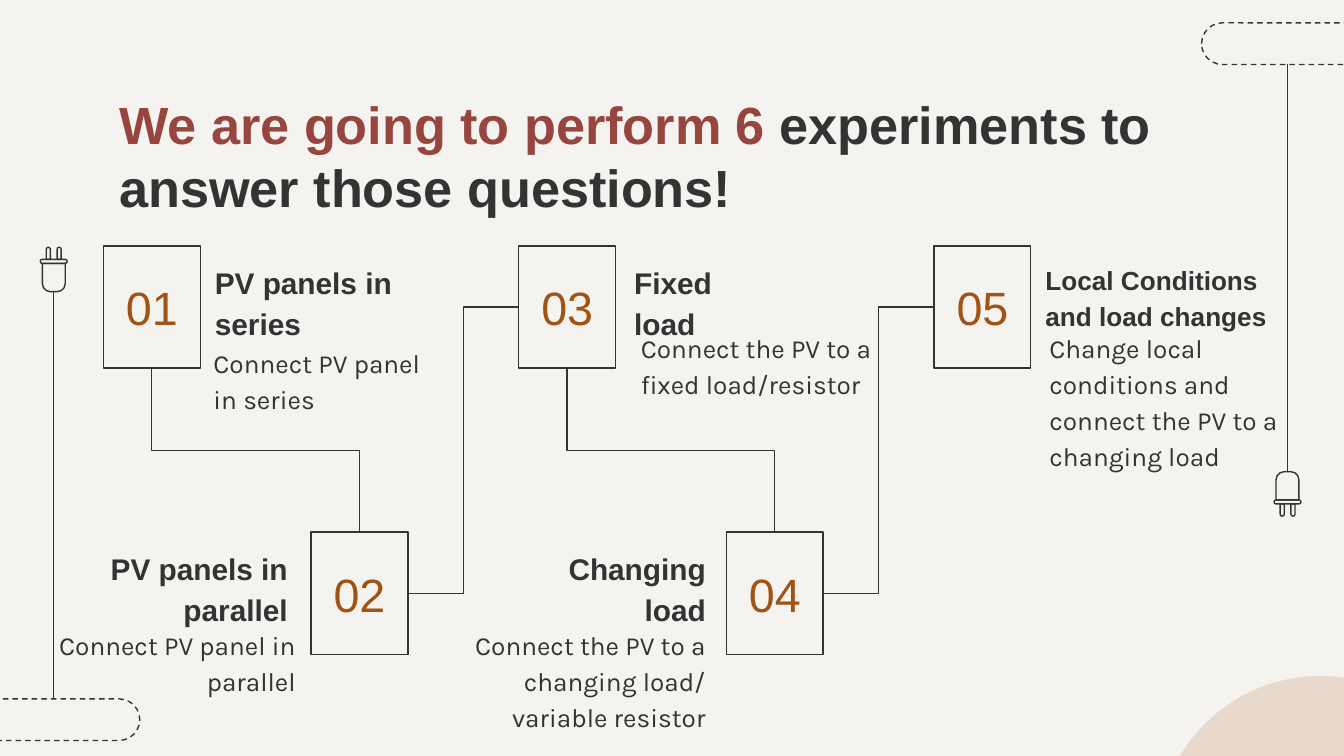
from pptx import Presentation
from pptx import util as u
from pptx.dml.color import RGBColor
from pptx.enum import dml, shapes, text
from pptx.oxml.ns import qn
from lxml import etree

Inches = u.Inches
SHAPE = shapes.MSO_SHAPE
LEFT, CENTER, RIGHT = text.PP_ALIGN.LEFT, text.PP_ALIGN.CENTER, text.PP_ALIGN.RIGHT
INK, PAPER, ORANGE, RED = "333333", "F5F3EF", "A15315", "97453F"

BOX_WIDTH, BOX_HEIGHT = 0.72, 0.91
FIRST_LEFT, LAST_LEFT = 0.77, 6.95
UPPER_TOP, LOWER_TOP = 1.83, 3.96

# heading, heading left and width, heading size, detail, detail left, top and width
STEPS = [
    ("PV panels in series", 1.5, 1.99, 16, "Connect PV panel in series", 1.49, 2.45, 1.83),
    ("PV panels in parallel", 0.41, 1.83, 16, "Connect PV panel in parallel", 0.14, 4.55, 2.16),
    ("Fixed\nload", 4.62, 3.08, 16, "Connect the PV to a fixed load/resistor", 4.67, 2.34, 2.16),
    ("Changing load", 3.76, 1.59, 16,
     "Connect the PV to a changing load/ variable resistor", 3.06, 4.55, 2.29),
    ("Local Conditions\nand load changes", 7.68, 3.08, 14,
     "Change local conditions and connect the PV to a changing load", 7.71, 2.34, 1.99),
]


def color(value):
    return RGBColor.from_string(value)


class Painter:
    def __init__(self, page):
        self.page = page
        self.page.background.fill.solid()
        self.page.background.fill.fore_color.rgb = color(PAPER)

    def outline(self, line):
        line.color.rgb = color(INK)
        line.width = u.Pt(0.75)

    def shape(self, kind, left, top, width, height, fill=None, adjust=None, turn=0):
        """Add an outlined preset shape, hollow unless a fill is given."""
        shape = self.page.shapes.add_shape(
            kind, Inches(left), Inches(top), Inches(width), Inches(height))
        shape.shadow.inherit = False
        shape.rotation = turn
        if adjust is not None:
            shape.adjustments[0] = adjust
        if fill:
            shape.fill.solid()
            shape.fill.fore_color.rgb = color(fill)
        else:
            shape.fill.background()
        self.outline(shape.line)
        return shape

    def pill(self, left, top):
        pill = self.shape(SHAPE.ROUNDED_RECTANGLE, left, top, 1.29, 0.31, adjust=0.5)
        pill.line.dash_style = dml.MSO_LINE.DASH

    def disc(self, left, top, size, fill, opacity):
        disc = self.shape(SHAPE.OVAL, left, top, size, size, fill)
        disc.line.fill.background()
        tint = disc._element.spPr.find(qn("a:solidFill"))[0]
        etree.SubElement(tint, qn("a:alpha")).set("val", str(opacity * 1000))

    def plug(self, middle, cable_end, direction):
        """Draw a plug whose prongs point up (-1) or down (1) from its cable."""
        body_turn, prong_turn = (180, 0) if direction < 0 else (0, 180)

        def part(kind, x, start, width, height, adjust, turn=0):
            near = cable_end + direction * start
            top = min(near, near + direction * height)
            self.shape(kind, x - width / 2, top, width, height, adjust=adjust, turn=turn)

        part(SHAPE.ROUND_2_SAME_RECTANGLE, middle, 0, 0.17, 0.21, 0.35, body_turn)
        part(SHAPE.ROUNDED_RECTANGLE, middle, 0.21, 0.2, 0.03, 0.5)
        for offset in (-0.04, 0.04):
            part(SHAPE.ROUND_2_SAME_RECTANGLE, middle + offset, 0.24, 0.03, 0.09, 0.5, prong_turn)

    def connector(self, start, end, kind=shapes.MSO_CONNECTOR.STRAIGHT):
        link = self.page.shapes.add_connector(kind, *map(Inches, start + end))
        self.outline(link.line)
        etree.SubElement(link._element.spPr, qn("a:effectLst"))
        return link

    def elbow_across(self, start, end):
        self.connector(start, end, shapes.MSO_CONNECTOR.ELBOW)

    def elbow_down(self, start, end):
        """Add an elbow that leaves and arrives vertically, as a quarter-turned one."""
        middle_x, middle_y = (start[0] + end[0]) / 2, (start[1] + end[1]) / 2
        half_x, half_y = (end[0] - start[0]) / 2, (end[1] - start[1]) / 2
        link = self.connector((middle_x + half_y, middle_y - half_x),
                              (middle_x - half_y, middle_y + half_x),
                              shapes.MSO_CONNECTOR.ELBOW)
        link._element.spPr.find(qn("a:xfrm")).set("rot", str(270 * 60000))

    def style_span(self, span, size, font, ink, bold):
        span.font.name = font
        span.font.size = u.Pt(size)
        span.font.bold = bold
        span.font.color.rgb = color(ink)

    def set_text(self, shape, content, size, font="Arial", ink=INK, bold=False,
                 align=LEFT, spacing=None, anchor=text.MSO_ANCHOR.TOP):
        frame = shape.text_frame
        frame.word_wrap = True
        frame.vertical_anchor = anchor
        frame.margin_left = frame.margin_right = Inches(0.1)
        frame.margin_top = frame.margin_bottom = Inches(0.1)
        frame.text = content
        for para in frame.paragraphs:
            para.alignment = align
            para.line_spacing = spacing
            for span in para.runs:
                self.style_span(span, size, font, ink, bold)
        return frame

    def label(self, content, left, top, width, height, size, **style):
        box = self.page.shapes.add_textbox(
            Inches(left), Inches(top), Inches(width), Inches(height))
        return self.set_text(box, content, size, **style)

    def title(self, highlight, rest):
        frame = self.label(highlight, 0.79, 0.59, 8.43, 0.63, 28, ink=RED, bold=True)
        span = frame.paragraphs[0].add_run()
        span.text = rest
        self.style_span(span, 28, "Arial", INK, True)

    def number_box(self, number, left, top):
        box = self.shape(SHAPE.RECTANGLE, left, top, BOX_WIDTH, BOX_HEIGHT, PAPER)
        self.set_text(box, f"{number:02}", 25, ink=ORANGE, align=CENTER,
                      anchor=text.MSO_ANCHOR.MIDDLE)


def main():
    deck = Presentation()
    deck.slide_width, deck.slide_height = Inches(10), Inches(10 * 9 / 16)
    painter = Painter(deck.slides.add_slide(deck.slide_layouts[6]))

    painter.pill(-0.25, 5.2)
    painter.connector((0.4, 5.2), (0.4, 2.17))
    painter.plug(0.4, 2.17, -1)
    painter.pill(8.94, 0.17)
    painter.connector((9.58, 0.48), (9.58, 3.51))
    painter.plug(9.58, 3.51, 1)
    painter.disc(8.61, 5.03, 2.43, ORANGE, 16)

    painter.title("We are going to perform 6 ", "experiments to answer those questions!")

    pitch = (LAST_LEFT - FIRST_LEFT) / (len(STEPS) - 1)
    corners = [(FIRST_LEFT + index * pitch, LOWER_TOP if index % 2 else UPPER_TOP)
               for index in range(len(STEPS))]

    for number, (step, (left, top)) in enumerate(zip(STEPS, corners), 1):
        heading, heading_left, heading_width, size, detail, *place = step
        align = RIGHT if top == LOWER_TOP else LEFT
        painter.number_box(number, left, top)
        painter.label(heading, heading_left, top, heading_width, BOX_HEIGHT, size,
                      bold=True, align=align, spacing=1.15)
        painter.label(detail, *place, 0.63, 14, font="Karla", align=align, spacing=1.15)

    for (left, top), (next_left, next_top) in zip(corners, corners[1:]):
        if top == UPPER_TOP:
            painter.elbow_down((left + BOX_WIDTH / 2, top + BOX_HEIGHT),
                               (next_left + BOX_WIDTH / 2, next_top))
        else:
            painter.elbow_across((left + BOX_WIDTH, top + BOX_HEIGHT / 2),
                                 (next_left, next_top + BOX_HEIGHT / 2))

    deck.save("out.pptx")


if __name__ == "__main__":
    main()
